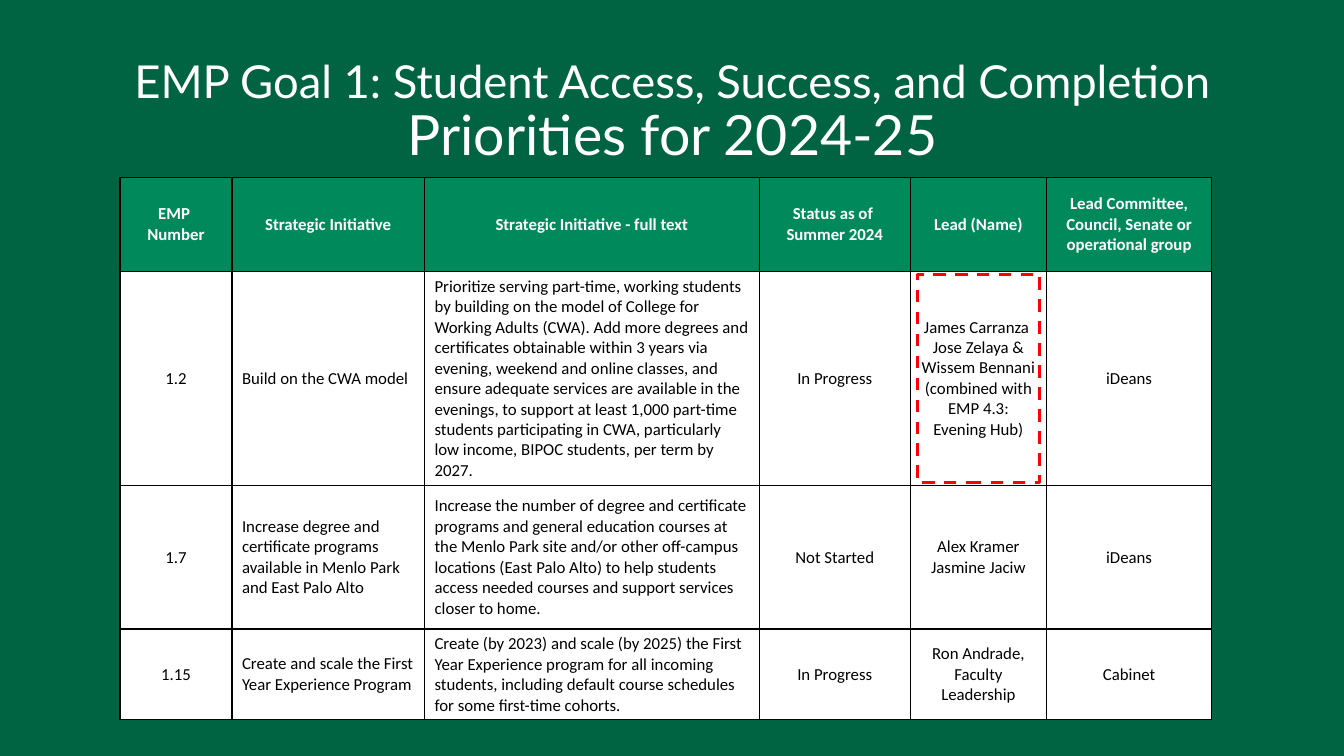
from collections import namedtuple
from dataclasses import dataclass

from lxml import etree
from pptx import Presentation
from pptx import util as u
from pptx.dml.color import RGBColor
from pptx.enum import dml, shapes, text
from pptx.oxml import ns

Box = namedtuple("Box", "left top width height")


@dataclass(frozen=True)
class Theme:
    background: str = "006342"
    header: str = "008A5C"
    white: str = "FFFFFF"
    black: str = "000000"
    highlight: str = "FF0000"
    title_font: str = "Lato"
    table_font: str = "Calibri"
    goal_size: float = 32.4
    priorities_size: float = 39.6
    table_size: float = 12
    border: float = 1
    dash: float = 2.25


THEME = Theme()
CENTER, LEFT = text.PP_ALIGN.CENTER, text.PP_ALIGN.LEFT

# Relative sizes of the table's columns and rows
COLUMNS = (1.11, 1.91, 3.32, 1.5, 1.35, 1.64)
ROWS = (0.93, 2.13, 1.42, 0.9)
LEFT_COLUMNS = (1, 2)
HIGHLIGHTED = (1, 4)

PRIORITIES = (
    ("EMP \nNumber", "Strategic Initiative", "Strategic Initiative - full text",
     "Status as of \nSummer 2024", "Lead (Name)",
     "Lead Committee, Council, Senate or operational group"),
    ("1.2", "Build on the CWA model",
     "Prioritize serving part-time, working students by building on the model of "
     "College for Working Adults (CWA). Add more degrees and certificates obtainable "
     "within 3 years via evening, weekend and online classes, and ensure adequate "
     "services are available in the evenings, to support at least 1,000 part-time "
     "students participating in CWA, particularly low income, BIPOC students, "
     "per term by 2027.",
     "In Progress",
     "James Carranza \nJose Zelaya &\nWissem Bennani\n"
     "(combined with EMP 4.3: Evening Hub)",
     "iDeans"),
    ("1.7",
     "Increase degree and certificate programs available in Menlo Park and East Palo Alto",
     "Increase the number of degree and certificate programs and general education "
     "courses at the Menlo Park site and/or other off-campus locations (East Palo Alto) "
     "to help students access needed courses and support services closer to home.",
     "Not Started", "Alex Kramer\nJasmine Jaciw", "iDeans"),
    ("1.15", "Create and scale the First Year Experience Program",
     "Create (by 2023) and scale (by 2025) the First Year Experience program for all "
     "incoming students, including default course schedules for some first-time cohorts.",
     "In Progress", "Ron Andrade, Faculty Leadership", "Cabinet"),
)


def color(name):
    return RGBColor.from_string(name)


def write(paragraph, words, *, size, font, ink, bold=False, align=CENTER):
    paragraph.alignment = align
    run = paragraph.add_run()
    run.text = words
    run.font.size = u.Pt(size)
    run.font.name = font
    run.font.bold = bold
    run.font.color.rgb = color(ink)


def split(start, length, weights):
    """Share a length out by weight, as (start, length) pairs."""
    spans = []
    for weight in weights:
        part = length * weight / sum(weights)
        spans.append((start, part))
        start += part
    return spans


def emu(box):
    return [u.Emu(round(value)) for value in box]


def add_title(slide, box):
    frame = slide.shapes.add_textbox(*emu(box)).text_frame
    frame.word_wrap = True
    frame.vertical_anchor = text.MSO_ANCHOR.MIDDLE
    heading = frame.paragraphs[0]
    heading.line_spacing = 0.9
    style = dict(font=THEME.title_font, ink=THEME.white)
    write(heading, "EMP Goal 1: Student Access, Success, and Completion",
          size=THEME.goal_size, **style)
    heading.add_line_break()
    write(heading, "Priorities for 2024-25", size=THEME.priorities_size, **style)


def add_borders(cell):
    properties = cell._tc.get_or_add_tcPr()
    for position, side in enumerate(("lnL", "lnR", "lnT", "lnB")):
        line = etree.Element(ns.qn(f"a:{side}"), w=str(u.Pt(THEME.border)))
        fill = etree.SubElement(line, ns.qn("a:solidFill"))
        etree.SubElement(fill, ns.qn("a:srgbClr"), val=THEME.black)
        properties.insert(position, line)


def fill_cell(cell, content, *, fill, **style):
    cell.fill.solid()
    cell.fill.fore_color.rgb = color(fill)
    cell.vertical_anchor = text.MSO_ANCHOR.MIDDLE
    add_borders(cell)
    frame = cell.text_frame
    for number, words in enumerate(content.split("\n")):
        paragraph = frame.add_paragraph() if number else frame.paragraphs[0]
        write(paragraph, words, size=THEME.table_size, font=THEME.table_font, **style)


def add_highlight(slide, cell_box):
    inset_x, inset_y = cell_box.width * 0.05, cell_box.height * 0.015
    frame = slide.shapes.add_shape(shapes.MSO_SHAPE.RECTANGLE, *emu((
        cell_box.left + inset_x, cell_box.top + inset_y,
        cell_box.width - 2 * inset_x, cell_box.height - 2 * inset_y)))
    frame.shadow.inherit = False
    frame.fill.background()
    frame.line.color.rgb = color(THEME.highlight)
    frame.line.width = u.Pt(THEME.dash)
    frame.line.dash_style = dml.MSO_LINE.DASH


def add_priorities(slide, box):
    table = slide.shapes.add_table(len(ROWS), len(COLUMNS), *emu(box)).table
    table.horz_banding = False
    columns = split(box.left, box.width, COLUMNS)
    rows = split(box.top, box.height, ROWS)
    for column, (_, width) in zip(table.columns, columns):
        column.width = u.Emu(round(width))
    for row, (_, height) in zip(table.rows, rows):
        row.height = u.Emu(round(height))

    # Header row, then one row for each initiative
    for r, initiative in enumerate(PRIORITIES):
        header = r == 0
        for c, content in enumerate(initiative):
            fill_cell(table.cell(r, c), content, bold=header,
                      fill=THEME.header if header else THEME.white,
                      ink=THEME.white if header else THEME.black,
                      align=LEFT if c in LEFT_COLUMNS and not header else CENTER)

    # Dashed frame inside the highlighted lead cell
    r, c = HIGHLIGHTED
    add_highlight(slide, Box(columns[c][0], rows[r][0], columns[c][1], rows[r][1]))


def main():
    deck = Presentation()
    deck.slide_width, deck.slide_height = u.Inches(13.33), u.Inches(7.5)
    slide = deck.slides.add_slide(deck.slide_layouts[6])
    slide.background.fill.solid()
    slide.background.fill.fore_color.rgb = color(THEME.background)

    def area(left, top, width, height):
        """Turn percentages of the slide into a box."""
        across, down = deck.slide_width / 100, deck.slide_height / 100
        return Box(left * across, top * down, width * across, height * down)

    add_title(slide, area(6.9, 5.33, 86.27, 19.33))
    add_priorities(slide, area(8.93, 23.47, 81.24, 71.73))
    deck.save("out.pptx")


if __name__ == "__main__":
    main()
